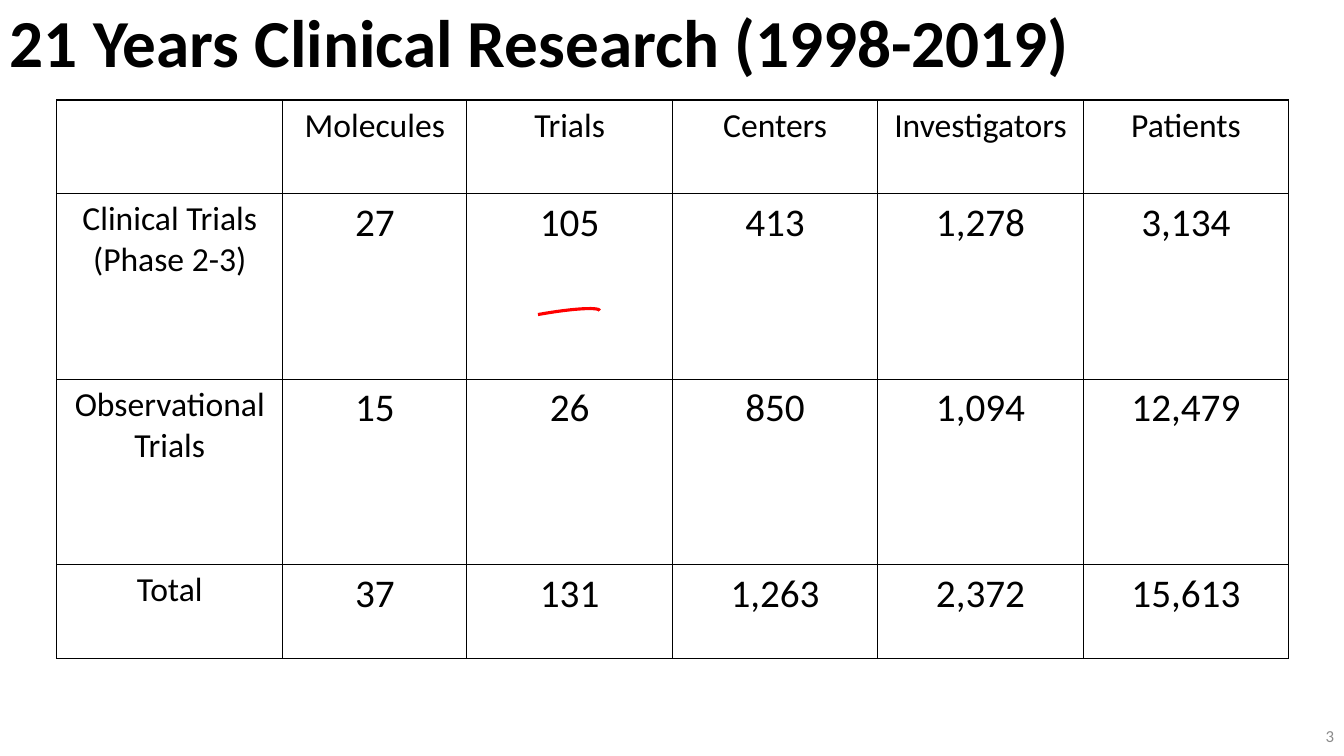
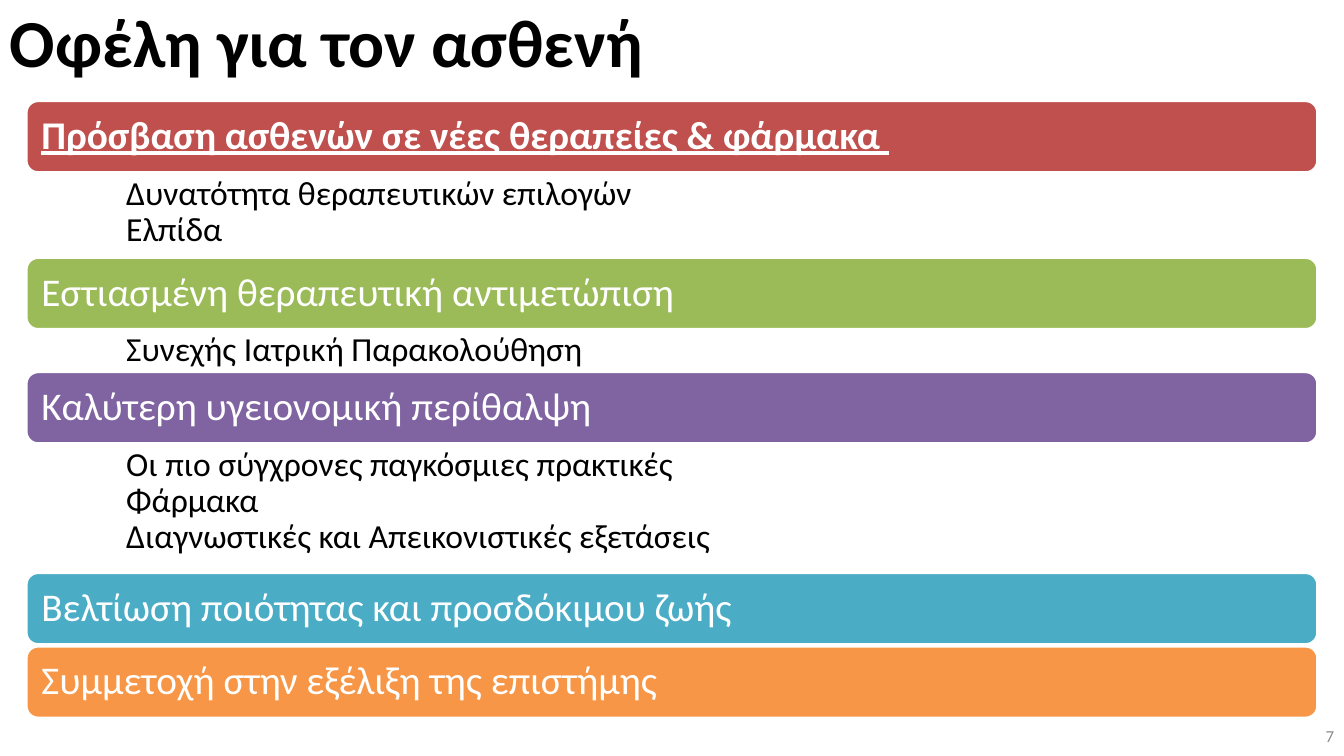
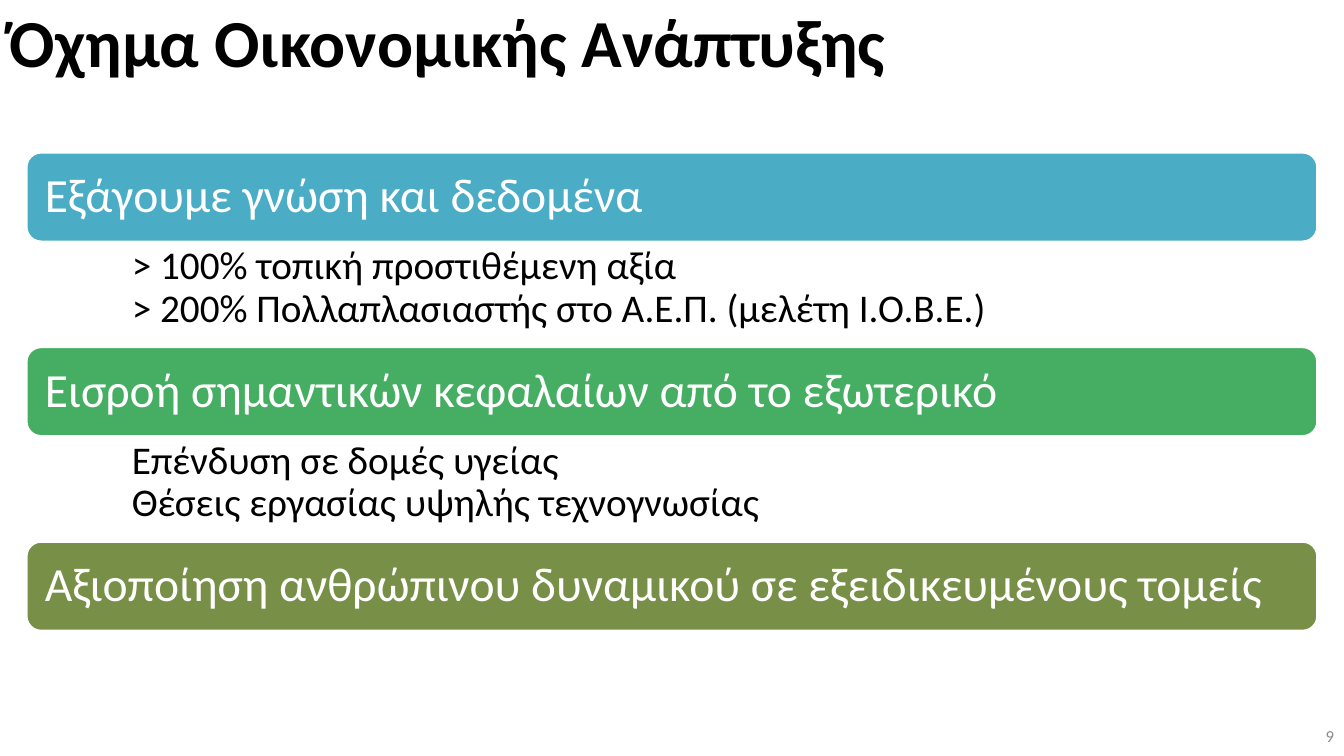
import dataclasses

import lxml.etree
import pptx
import pptx.dml.color
import pptx.enum.shapes
import pptx.enum.text
import pptx.oxml.ns
import pptx.util

Pt = pptx.util.Pt
Align = pptx.enum.text.PP_ALIGN
Anchor = pptx.enum.text.MSO_ANCHOR
Preset = pptx.enum.shapes.MSO_SHAPE
qn = pptx.oxml.ns.qn


@dataclasses.dataclass(frozen=True)
class Theme:
    font: str = "Calibri"
    black: str = "000000"
    white: str = "FFFFFF"
    gray: str = "8B8B8B"
    ink: str = "FF0000"
    red: str = "C0504D"
    lime: str = "9BBB59"
    purple: str = "8064A2"
    teal: str = "4BACC6"
    orange: str = "F79646"
    green: str = "45AE62"
    olive: str = "778F46"
    title_size: int = 48
    heading_size: int = 34
    large_size: int = 28
    text_size: int = 24
    number_size: int = 12


theme = Theme()


def add_run(paragraph, text, size, color, bold=False, underline=False):
    run = paragraph.add_run()
    run.text = text
    run.font.name = theme.font
    run.font.size = Pt(size)
    run.font.bold = bold
    run.font.underline = underline
    run.font.color.rgb = pptx.dml.color.RGBColor.from_string(color)


def frame_text(shape, anchor, margins=(7.2, 3.6, 7.2, 3.6)):
    """Wrap and place the text of a shape; margins are left, top, right, bottom."""
    frame = shape.text_frame
    frame.word_wrap = True
    frame.vertical_anchor = anchor
    frame.margin_left, frame.margin_top, frame.margin_right, frame.margin_bottom = map(Pt, margins)
    return frame


presentation = pptx.Presentation()
presentation.slide_width = Pt(960)
presentation.slide_height = Pt(540)

# Shared title and slide number
slides = []
for title, number in [
    ("21 Years Clinical Research (1998-2019)", "3"),
    ("Οφέλη για τον ασθενή", "7"),
    ("Όχημα Οικονομικής Ανάπτυξης", "9"),
]:
    slide = presentation.slides.add_slide(presentation.slide_layouts[6])
    slides.append(slide)
    title_box = slide.shapes.add_textbox(Pt(0), Pt(0), Pt(960), Pt(65))
    paragraph = frame_text(title_box, Anchor.MIDDLE).paragraphs[0]
    paragraph.line_spacing = 0.9
    add_run(paragraph, title, theme.title_size, theme.black, bold=True)
    number_box = slide.shapes.add_textbox(Pt(744), Pt(511), Pt(216), Pt(29))
    paragraph = frame_text(number_box, Anchor.MIDDLE).paragraphs[0]
    paragraph.alignment = Align.RIGHT
    add_run(paragraph, number, theme.number_size, theme.gray)

# Clinical research table
research_rows = [
    ("", "Molecules", "Trials", "Centers", "Investigators", "Patients"),
    ("Clinical Trials (Phase 2-3)", "27", "105", "413", "1,278", "3,134"),
    ("Observational Trials", "15", "26", "850", "1,094", "12,479"),
    ("Total", "37", "131", "1,263", "2,372", "15,613"),
]
column_widths = [161.5, 131.5, 146.75, 146.75, 146.75, 146.75]
row_heights = [67, 132.5, 132.5, 67]
table = slides[0].shapes.add_table(
    len(row_heights), len(column_widths), Pt(40.5), Pt(71.5),
    Pt(sum(column_widths)), Pt(sum(row_heights))).table
table.first_row = False
table.horz_banding = False
for column, width in zip(table.columns, column_widths):
    column.width = Pt(width)
for row_index, (row, height, texts) in enumerate(zip(table.rows, row_heights, research_rows)):
    row.height = Pt(height)
    for column_index, (cell, text) in enumerate(zip(row.cells, texts)):
        properties = cell._tc.get_or_add_tcPr()
        for side in ("a:lnL", "a:lnR", "a:lnT", "a:lnB"):
            border = lxml.etree.SubElement(properties, qn(side), w=str(Pt(1)))
            fill = lxml.etree.SubElement(border, qn("a:solidFill"))
            lxml.etree.SubElement(fill, qn("a:srgbClr"), val=theme.black)
        cell.fill.solid()
        cell.fill.fore_color.rgb = pptx.dml.color.RGBColor.from_string(theme.white)
        if text:
            is_label = row_index == 0 or column_index == 0
            paragraph = cell.text_frame.paragraphs[0]
            paragraph.alignment = Align.CENTER
            add_run(paragraph, text, theme.text_size if is_label else theme.large_size, theme.black)

pen_stroke = slides[0].shapes.add_shape(Preset.ARC, Pt(341.3), Pt(224.6), Pt(87.8), Pt(10))
pen_stroke.rotation = 349.8
pen_stroke.shadow.inherit = False
pen_stroke.fill.background()
pen_stroke.line.color.rgb = pptx.dml.color.RGBColor.from_string(theme.ink)
pen_stroke.line.width = Pt(2.25)

# Coloured bands, each followed by its bullet list
patient_benefits = [
    ("Πρόσβαση ασθενών σε νέες θεραπείες & φάρμακα ", theme.red, 60.7,
     ["Δυνατότητα θεραπευτικών επιλογών", "Ελπίδα"]),
    ("Εστιασμένη θεραπευτική αντιμετώπιση", theme.lime, 30.3, ["Συνεχής Ιατρική Παρακολούθηση"]),
    ("Καλύτερη υγειονομική περίθαλψη", theme.purple, 92.2,
     ["Οι πιο σύγχρονες παγκόσμιες πρακτικές", "Φάρμακα",
      "Διαγνωστικές και Απεικονιστικές εξετάσεις"]),
    ("Βελτίωση ποιότητας και προσδόκιμου ζωής", theme.teal, 1.2, []),
    ("Συμμετοχή στην εξέλιξη της επιστήμης", theme.orange, 0, []),
]
economic_benefits = [
    ("Εξάγουμε γνώση και δεδομένα", theme.teal, 74.9,
     ["> 100% τοπική προστιθέμενη αξία", "> 200% Πολλαπλασιαστής στο Α.Ε.Π. (μελέτη I.O.B.E.)"]),
    ("Εισροή σημαντικών κεφαλαίων από το εξωτερικό", theme.green, 74.9,
     ["Επένδυση σε δομές υγείας", "Θέσεις εργασίας υψηλής τεχνογνωσίας"]),
    ("Αξιοποίηση ανθρώπινου δυναμικού σε εξειδικευμένους τομείς", theme.olive, 0, []),
]
band_left, band_width = Pt(18.7), Pt(922.5)
for slide, bands, top, band_height, band_size, item_size, band_margins, list_margins in [
    (slides[1], patient_benefits, 72, 51.3, theme.large_size, theme.text_size,
     (8.4, 10.9, 8.4, 10.9), (29.5, 2.4, 13.4, 2.4)),
    (slides[2], economic_benefits, 108.7, 64.1, theme.heading_size, theme.large_size,
     (10.2, 13.4, 10.2, 13.4), (29.5, 2.8, 15.8, 2.8)),
]:
    for heading, color, list_height, items in bands:
        band = slide.shapes.add_shape(
            Preset.ROUNDED_RECTANGLE, band_left, Pt(top), band_width, Pt(band_height))
        band.shadow.inherit = False
        band.fill.solid()
        band.fill.fore_color.rgb = pptx.dml.color.RGBColor.from_string(color)
        band.line.color.rgb = pptx.dml.color.RGBColor.from_string(theme.white)
        band.line.width = Pt(2)
        paragraph = frame_text(band, Anchor.MIDDLE, band_margins).paragraphs[0]
        paragraph.alignment = Align.LEFT
        paragraph.line_spacing = 0.9
        is_emphasized = color == theme.red
        add_run(paragraph, heading, band_size, theme.white, is_emphasized, is_emphasized)
        top += band_height
        if items:
            list_box = slide.shapes.add_textbox(band_left, Pt(top), band_width, Pt(list_height))
            frame = frame_text(list_box, Anchor.TOP, list_margins)
            for index, item in enumerate(items):
                paragraph = frame.add_paragraph() if index else frame.paragraphs[0]
                paragraph.level = 1
                paragraph.line_spacing = 0.9
                properties = paragraph._p.get_or_add_pPr()
                properties.set("marL", str(Pt(18)))
                properties.set("indent", "0")
                # This Wingdings character is a clock face
                lxml.etree.SubElement(properties, qn("a:buFont"), typeface="Wingdings",
                                      pitchFamily="2", charset="2")
                lxml.etree.SubElement(properties, qn("a:buChar"), char="·")
                add_run(paragraph, item, item_size, theme.black)
        top += list_height

presentation.save("out.pptx")
